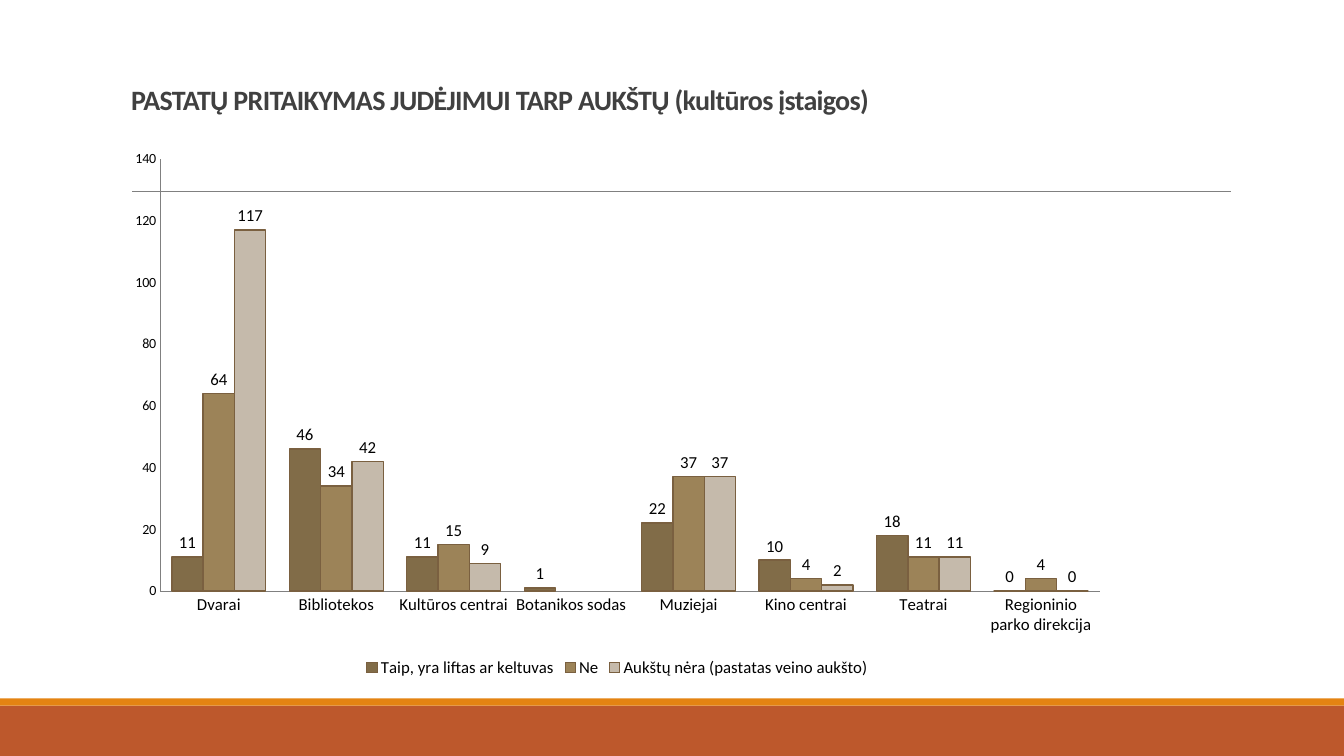
from pptx import Presentation
from pptx.chart.data import CategoryChartData
from pptx.dml.color import RGBColor
from pptx.enum.chart import XL_CHART_TYPE as ChartType
from pptx.enum.chart import XL_LABEL_POSITION as LabelPosition
from pptx.enum.chart import XL_LEGEND_POSITION as LegendPosition
from pptx.enum.chart import XL_TICK_MARK as TickMark
from pptx.enum.shapes import MSO_CONNECTOR as Connector
from pptx.enum.shapes import MSO_SHAPE as Shape
from pptx.enum.text import MSO_ANCHOR as Anchor
from pptx.enum.text import MSO_AUTO_SIZE as AutoSize
from pptx.enum.text import PP_ALIGN as Align
from pptx.oxml import parse_xml
from pptx.oxml.ns import nsdecls, qn
from pptx.util import Inches, Pt

WIDTH, HEIGHT = Inches(13.33), Inches(7.5)
COLUMNS, ROWS = 160, 90
FONT = "Calibri"

RUST = RGBColor(0xBD, 0x58, 0x2C)
ORANGE = RGBColor(0xE4, 0x83, 0x12)
GREY = RGBColor(0x80, 0x80, 0x80)
CHARCOAL = RGBColor(0x40, 0x40, 0x40)
BLACK = RGBColor(0x00, 0x00, 0x00)
BAR_EDGE = RGBColor(0x7A, 0x60, 0x40)

TITLE = "PASTATŲ PRITAIKYMAS JUDĖJIMUI TARP AUKŠTŲ (kultūros įstaigos)"
INSTITUTIONS = [
    "Dvarai", "Bibliotekos", "Kultūros centrai", "Botanikos sodas",
    "Muziejai", "Kino centrai", "Teatrai", "Regioninio parko direkcija",
]
ANSWERS = [
    ("Taip, yra liftas ar keltuvas", [11, 46, 11, 1, 22, 10, 18, 0],
     RGBColor(0x81, 0x6C, 0x48)),
    ("Ne", [64, 34, 15, None, 37, 4, 11, 4],
     RGBColor(0x9C, 0x83, 0x58)),
    ("Aukštų nėra (pastatas veino aukšto)", [117, 42, 9, None, 37, 2, 11, 0],
     RGBColor(0xC5, 0xBA, 0xAB)),
]


def grid(column, row, columns, rows):
    """Turn grid columns and rows into left, top, width and height."""
    return (int(WIDTH * column / COLUMNS), int(HEIGHT * row / ROWS),
            int(WIDTH * columns / COLUMNS), int(HEIGHT * rows / ROWS))


def style_font(font, size, color=BLACK):
    """Give a font the slide's typeface, a size and a colour."""
    font.name = FONT
    font.size = Pt(size)
    font.color.rgb = color


def add_band(slide, row, rows, color):
    """Add a full-width plain band."""
    band = slide.shapes.add_shape(Shape.RECTANGLE, *grid(0, row, COLUMNS, rows))
    band.shadow.inherit = False
    band.fill.solid()
    band.fill.fore_color.rgb = color
    band.line.fill.background()


def add_rule(slide, column, row, columns):
    """Add a thin horizontal rule."""
    left, top, length, _ = grid(column, row, columns, 0)
    rule = slide.shapes.add_connector(
        Connector.STRAIGHT, left, top, left + length, top)
    rule.line.color.rgb = GREY
    rule.line.width = Pt(0.5)
    rule._element.spPr.append(parse_xml(f"<a:effectLst {nsdecls('a')}/>"))


def set_title(slide, text, place):
    """Place and format the title placeholder."""
    title = slide.shapes.title
    title.left, title.top, title.width, title.height = place
    frame = title.text_frame
    frame.word_wrap = True
    frame.auto_size = AutoSize.NONE
    frame.vertical_anchor = Anchor.BOTTOM
    heading = frame.paragraphs[0]
    heading.alignment = Align.LEFT
    heading.line_spacing = 0.85
    run = heading.add_run()
    run.text = text
    style_font(run.font, 20, CHARCOAL)
    run.font.bold = True
    run._r.get_or_add_rPr().set("spc", "-50")


def style_axis(axis, size):
    """Format an axis without gridlines or tick marks."""
    axis.has_major_gridlines = False
    axis.major_tick_mark = axis.minor_tick_mark = TickMark.NONE
    axis.format.line.color.rgb = GREY
    style_font(axis.tick_labels.font, size)


def style_series(series, color):
    """Colour the bars of a series and label them with values."""
    series.format.fill.solid()
    series.format.fill.fore_color.rgb = color
    series.format.line.color.rgb = BAR_EDGE
    series.format.line.width = Pt(1)
    labels = series.data_labels
    labels.show_value = True
    labels.position = LabelPosition.OUTSIDE_END
    style_font(labels.font, 12)


def fix_plot_area(chart, **shares):
    """Set the inner plot area as shares of the chart."""
    area = chart._chartSpace.chart.plotArea
    for old in area.findall(qn("c:layout")):
        area.remove(old)
    sides = "".join(f'<c:{side} val="{share}"/>' for side, share in shares.items())
    area.insert(0, parse_xml(
        f'<c:layout {nsdecls("c")}><c:manualLayout><c:layoutTarget val="inner"/>'
        f'<c:xMode val="edge"/><c:yMode val="edge"/>{sides}'
        '</c:manualLayout></c:layout>'))


def add_answers_chart(slide, place):
    """Add the clustered columns of answers per institution."""
    counts = CategoryChartData(number_format="General")
    counts.categories = INSTITUTIONS
    for name, values, _ in ANSWERS:
        counts.add_series(name, values)
    chart = slide.shapes.add_chart(
        ChartType.COLUMN_CLUSTERED, *place, counts).chart
    style_font(chart.font, 10)
    chart.has_title = False
    chart.has_legend = True
    chart.legend.position = LegendPosition.BOTTOM
    chart.legend.include_in_layout = False
    style_font(chart.legend.font, 12)
    style_axis(chart.category_axis, 12)
    style_axis(chart.value_axis, 10)
    chart.value_axis.minimum_scale = 0
    chart.value_axis.maximum_scale = 140
    chart.value_axis.major_unit = 20
    columns = chart.plots[0]
    columns.gap_width = 75
    columns.overlap = 0
    columns.vary_by_categories = False
    for series, (_, _, color) in zip(columns.series, ANSWERS):
        style_series(series, color)
    fix_plot_area(chart, x=0.045, y=0.033, w=0.935, h=0.8)


def main():
    """Build the slide and save it."""
    deck = Presentation()
    deck.slide_width, deck.slide_height = WIDTH, HEIGHT
    slide = deck.slides.add_slide(deck.slide_layouts.get_by_name("Title Only"))
    add_band(slide, 84, 6, RUST)
    add_band(slide, 83.16, 0.84, ORANGE)
    add_rule(slide, 15.72, 22.8, 130.8)
    set_title(slide, TITLE, grid(14.4, 3.72, 132, 10.68))
    add_answers_chart(slide, grid(13.68, 16.8, 119.64, 64.32))
    deck.save("out.pptx")


if __name__ == "__main__":
    main()
